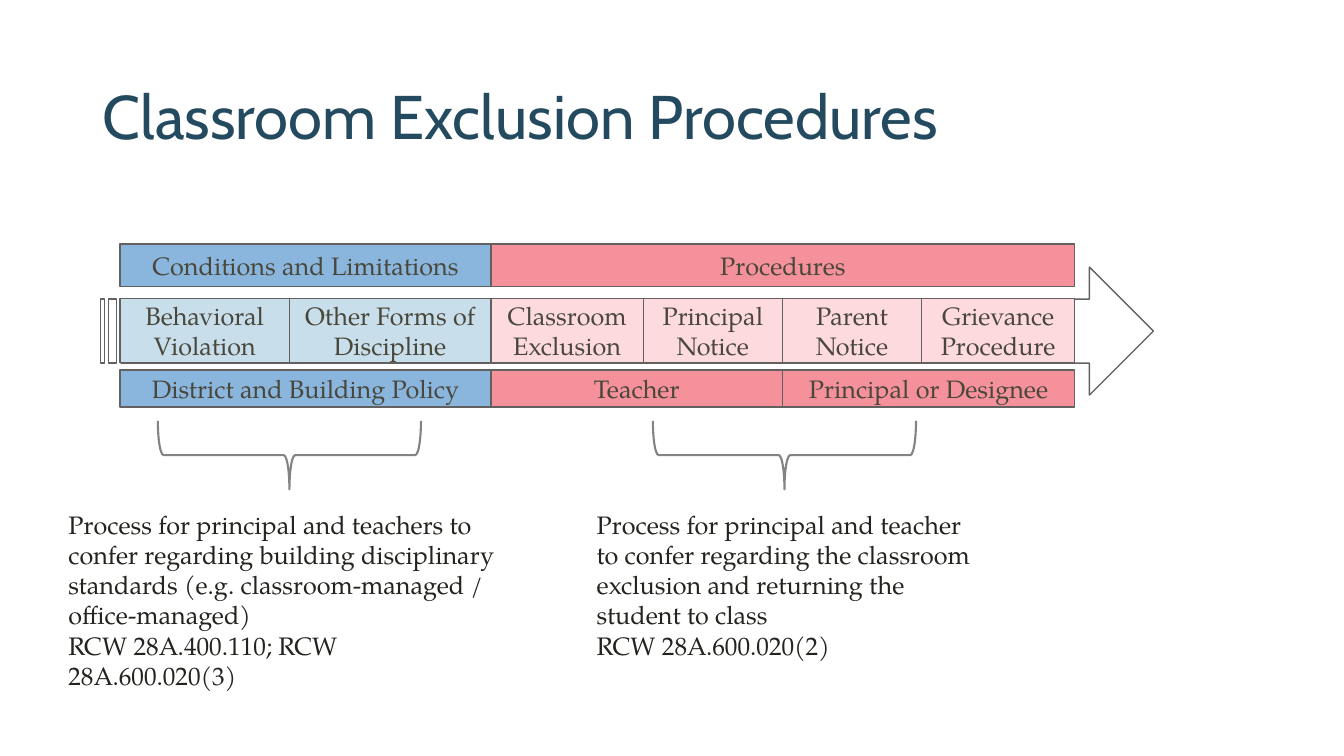
from pptx import Presentation
from pptx.dml.color import RGBColor
from pptx.enum.shapes import MSO_SHAPE as Shape
from pptx.enum.text import MSO_ANCHOR as Anchor, MSO_AUTO_SIZE as Fit, PP_ALIGN as Align
from pptx.util import Inches, Pt


def paint(color, hue):
    color.rgb = RGBColor.from_string(hue)


def write(frame, text, hue, align=Align.LEFT, size=18, face="TeX Gyre Pagella"):
    frame.text = text
    frame.word_wrap = True
    for para in frame.paragraphs:
        para.alignment = align
        for run in para.runs:
            run.font.size = Pt(size)
            run.font.name = face
            paint(run.font.color, hue)


deck = Presentation()
deck.slide_width, deck.slide_height = Inches(13.33), Inches(7.5)
slide = deck.slides.add_slide(deck.slide_layouts[5])
shapes = slide.shapes

# Title
title = shapes.title
title.left, title.top = Inches(0.92), Inches(0.46)
title.width, title.height = Inches(11.5), Inches(1.45)
write(title.text_frame, "Classroom Exclusion Procedures", "244A5F", size=44, face="Cabin")
title.text_frame.vertical_anchor = Anchor.MIDDLE
title.text_frame.paragraphs[0].line_spacing = 0.9

# Striped arrow behind the steps
arrow = shapes.add_shape(Shape.STRIPED_RIGHT_ARROW, Inches(1), Inches(2.65),
                         Inches(10.44), Inches(1.27))
arrow.shadow.inherit = False
arrow.fill.solid()
paint(arrow.fill.fore_color, "FFFFFF")
paint(arrow.line.color, "626160")
arrow.line.width = Pt(1)

# Bands: top, height, then label, first edge, last edge, fill
edges = [1.19, 2.87, 4.87, 6.38, 7.76, 9.14, 10.66]
blue, red, sky, pink = "8AB6DD", "F5919B", "C8DEEA", "FCDADE"
steps = ["Behavioral Violation", "Other Forms of Discipline", "Classroom Exclusion",
         "Principal Notice", "Parent Notice", "Grievance Procedure"]
bands = [
    (2.96, 0.64, [(step, i, i + 1, sky if i < 2 else pink) for i, step in enumerate(steps)]),
    (2.42, 0.42, [("Conditions and Limitations", 0, 2, blue), ("Procedures", 2, 6, red)]),
    (3.67, 0.37, [("District and Building Policy", 0, 2, blue), ("Teacher", 2, 4, red),
                  ("Principal or Designee", 4, 6, red)]),
]
for top, height, cells in bands:
    for label, start, end, hue in cells:
        box = shapes.add_shape(Shape.RECTANGLE, Inches(edges[start]), Inches(top),
                               Inches(edges[end] - edges[start]), Inches(height))
        box.shadow.inherit = False
        box.fill.solid()
        paint(box.fill.fore_color, hue)
        paint(box.line.color, "626160")
        box.line.width = Pt(1)
        write(box.text_frame, label, "49473B", Align.CENTER)
        box.text_frame.vertical_anchor = Anchor.MIDDLE

# Braces with the notes below them: brace left, note left, width, height, text
notes = [
    (2.53, 0.58, 4.59, 1.91,
     "Process for principal and teachers to confer regarding building disciplinary "
     "standards (e.g. classroom-managed / office-managed)\n"
     "RCW 28A.400.110; RCW 28A.600.020(3)"),
    (7.44, 5.82, 3.92, 1.62,
     "Process for principal and teacher to confer regarding the classroom exclusion "
     "and returning the student to class\nRCW 28A.600.020(2)"),
]
for mark, left, width, height, text in notes:
    brace = shapes.add_shape(Shape.RIGHT_BRACE, Inches(mark), Inches(3.21),
                             Inches(0.68), Inches(2.61))
    brace.rotation = 90
    brace.shadow.inherit = False
    brace.fill.background()
    paint(brace.line.color, "848382")
    brace.line.width = Pt(1.5)

    note = shapes.add_textbox(Inches(left), Inches(5), Inches(width), Inches(height))
    write(note.text_frame, text, "24231E")
    note.text_frame.auto_size = Fit.SHAPE_TO_FIT_TEXT

deck.save("out.pptx")
